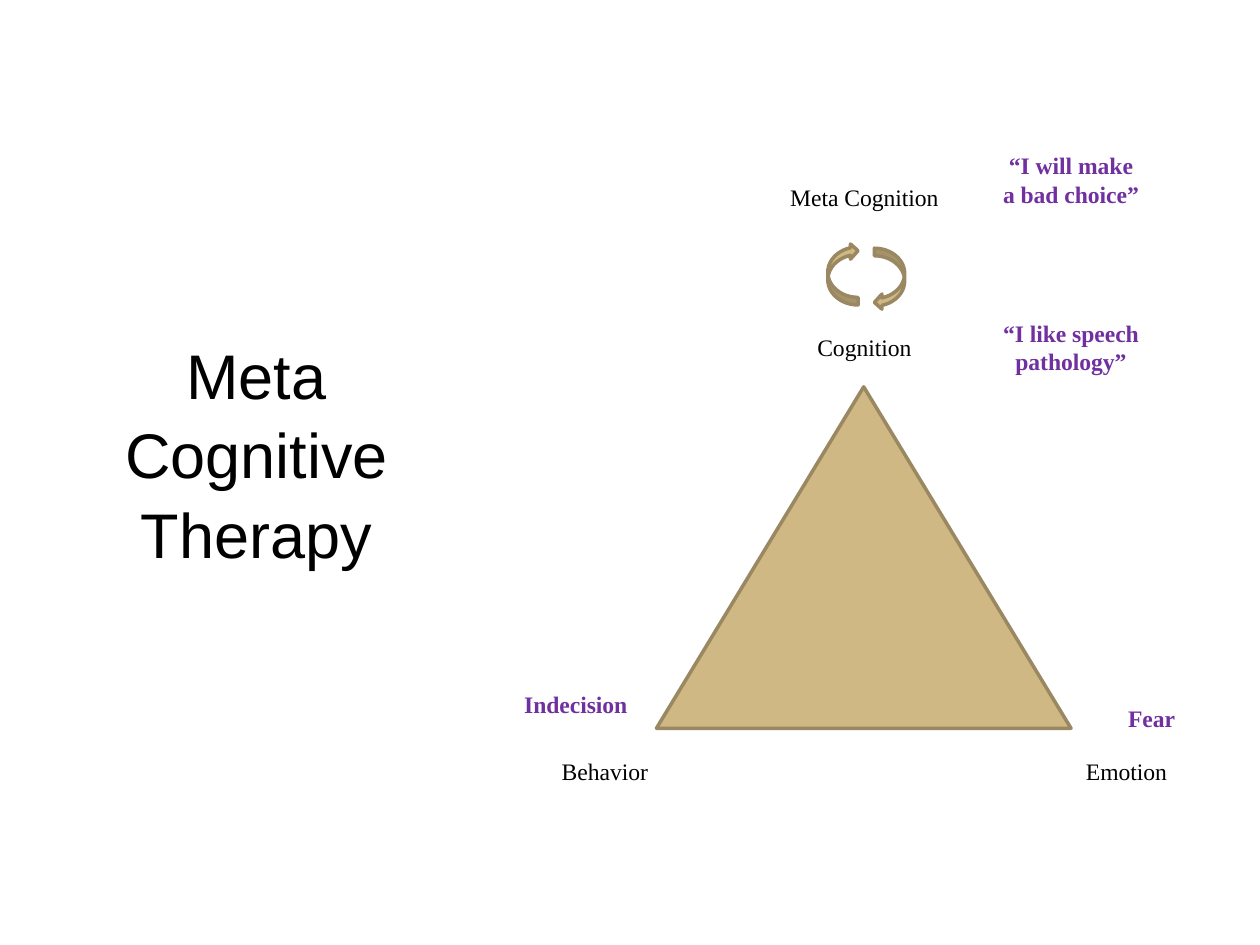
import pptx
import pptx.util
import pptx.dml.color
import pptx.enum.shapes
import pptx.enum.text

Inches = pptx.util.Inches
RGBColor = pptx.dml.color.RGBColor
MSO_SHAPE = pptx.enum.shapes.MSO_SHAPE

BLACK = RGBColor(0x00, 0x00, 0x00)
PURPLE = RGBColor(0x70, 0x30, 0xA0)
TAN = RGBColor(0xD0, 0xB8, 0x84)
BROWN = RGBColor(0x9A, 0x88, 0x62)


def add_text(s, text, left, top, width, height=Inches(0.33), size=13.5,
             font="Times New Roman", color=BLACK, bold=False, spacing=None,
             anchor=pptx.enum.text.MSO_ANCHOR.TOP):
    tf = s.shapes.add_textbox(left, top, width, height).text_frame
    tf.word_wrap = True
    tf.vertical_anchor = anchor
    p = tf.paragraphs[0]
    p.text = text
    p.alignment = pptx.enum.text.PP_ALIGN.CENTER
    p.line_spacing = spacing
    for r in p.runs:
        r.font.name = font
        r.font.size = pptx.util.Pt(size)
        r.font.bold = bold
        r.font.color.rgb = color
    return tf


def add_tan_shape(s, kind, left, top, width, height, rotation=0):
    sp = s.shapes.add_shape(kind, left, top, width, height)
    sp.rotation = rotation
    sp.shadow.inherit = False
    sp.fill.solid()
    sp.fill.fore_color.rgb = TAN
    sp.line.color.rgb = BROWN
    sp.line.width = pptx.util.Pt(2)


def add_title(s, left, top, width, height):
    tf = add_text(s, "Meta\vCognitive\vTherapy", left, top, width, height,
                  size=36, font="Arial", spacing=1.05,
                  anchor=pptx.enum.text.MSO_ANCHOR.MIDDLE)
    tf.margin_left = tf.margin_right = Inches(0.07)
    tf.margin_top = tf.margin_bottom = Inches(0.04)


def add_triangle(s, left, top, width, height):
    add_tan_shape(s, MSO_SHAPE.ISOSCELES_TRIANGLE, left, top, width, height)
    corners = [("Emotion", 3.02, 2.89), ("Cognition", 0.94, -0.48),
               ("Behavior", -1.12, 2.89)]
    for text, dx, dy in corners:
        add_text(s, text, left + Inches(dx), top + Inches(dy), Inches(1.42))


def add_cycle(s, left, top, width):
    add_text(s, "Meta Cognition", left, top, width)
    for dx, dy, rotation in [(0.9, 0.57, 0), (0.53, 0.53, 180)]:
        add_tan_shape(s, MSO_SHAPE.CURVED_LEFT_ARROW, left + Inches(dx),
                      top + Inches(dy), Inches(0.24), Inches(0.49), rotation)


def add_examples(s, left, top, width):
    examples = [("“I will make a bad choice”", 3.93, 0, 0.78),
                ("Fear", 4.57, 4.39, 0.33),
                ("Indecision", 0, 4.28, 0.33),
                ("“I like speech pathology”", 3.93, 1.33, 0.78)]
    for text, dx, dy, height in examples:
        add_text(s, text, left + Inches(dx), top + Inches(dy), width,
                 Inches(height), color=PURPLE, bold=True)


def main():
    prs = pptx.Presentation()
    prs.slide_width, prs.slide_height = Inches(10), Inches(7.5)
    s = prs.slides.add_slide(prs.slide_layouts[6])
    add_title(s, Inches(0.61), Inches(1.55), Inches(2.85), Inches(4.07))
    add_triangle(s, Inches(5.21), Inches(3.07), Inches(3.29), Inches(2.71))
    add_cycle(s, Inches(6.04), Inches(1.4), Inches(1.64))
    add_examples(s, Inches(3.93), Inches(1.15), Inches(1.28))
    prs.save("out.pptx")


if __name__ == "__main__":
    main()
